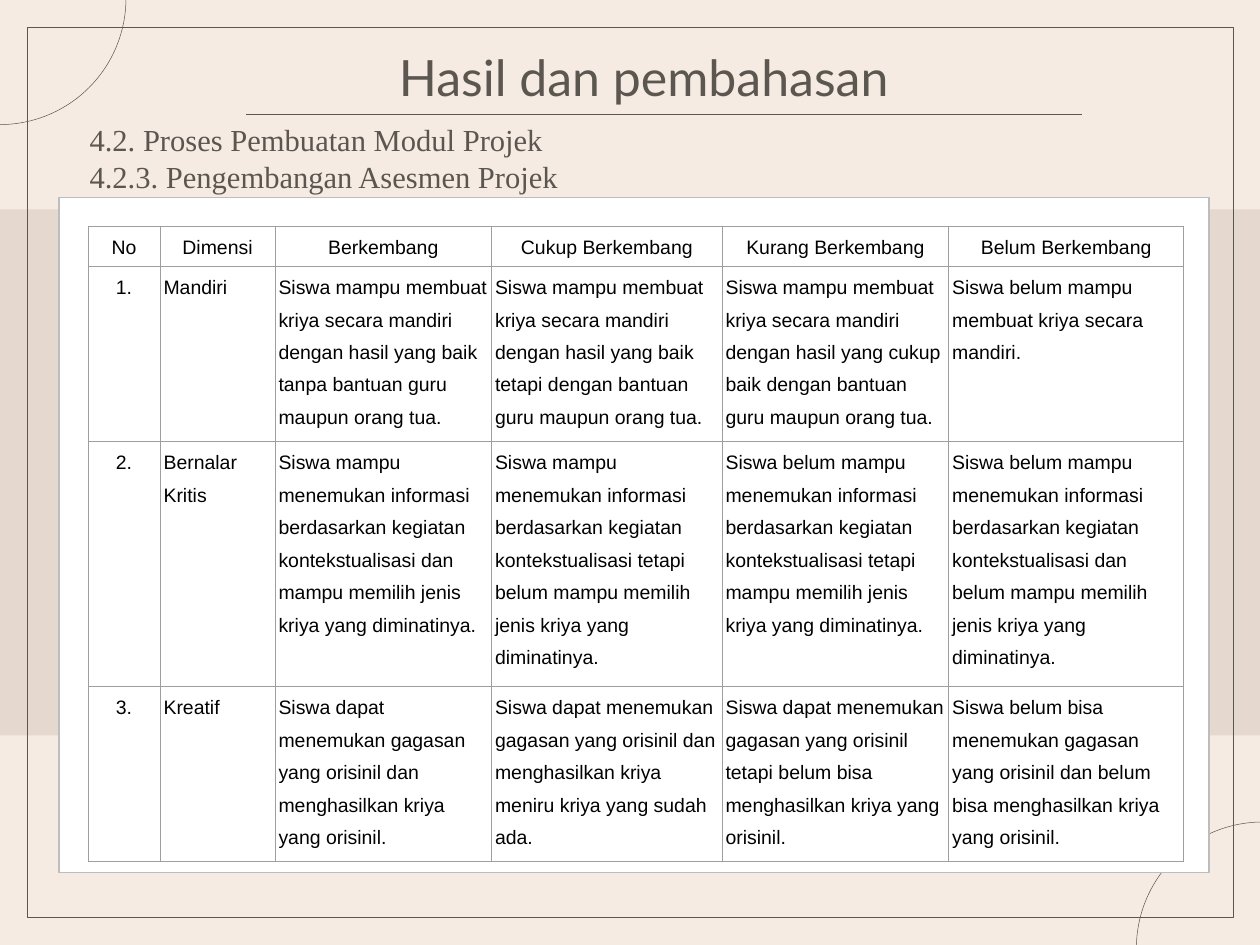
from lxml.etree import SubElement
from pptx import Presentation
from pptx.dml.color import RGBColor
from pptx.enum.shapes import MSO_CONNECTOR, MSO_SHAPE
from pptx.enum.text import MSO_ANCHOR, PP_ALIGN
from pptx.oxml import parse_xml
from pptx.oxml.ns import nsdecls, qn
from pptx.util import Cm, Pt

CREAM = RGBColor(0xF5, 0xEB, 0xE2)
SAND = RGBColor(0xE4, 0xD8, 0xCF)
BROWN = RGBColor(0x5C, 0x56, 0x51)
WHITE = RGBColor(0xFF, 0xFF, 0xFF)
BLACK = RGBColor(0, 0, 0)
SILVER = RGBColor(0xBD, 0xBD, 0xBD)
GRAY = RGBColor(0x9E, 0x9E, 0x9E)

WIDTH, HEIGHT = 64.01, 48.01
COLS = [3.66, 5.84, 11, 11.71, 11.51, 11.94]
ROWS = [2.01, 8.36, 11.53, 8.36]
RUBRIC = [
    ["No", "Dimensi", "Berkembang", "Cukup Berkembang", "Kurang Berkembang",
     "Belum Berkembang"],
    ["1.", "Mandiri",
     "Siswa mampu membuat kriya secara mandiri dengan hasil yang baik tanpa bantuan guru maupun orang tua.",
     "Siswa mampu membuat kriya secara mandiri dengan hasil yang baik tetapi dengan bantuan guru maupun orang tua.",
     "Siswa mampu membuat kriya secara mandiri dengan hasil yang cukup baik dengan bantuan guru maupun orang tua.",
     "Siswa belum mampu membuat kriya secara mandiri."],
    ["2.", "Bernalar Kritis",
     "Siswa mampu menemukan informasi berdasarkan kegiatan kontekstualisasi dan mampu memilih jenis kriya yang diminatinya.",
     "Siswa mampu menemukan informasi berdasarkan kegiatan kontekstualisasi tetapi belum mampu memilih jenis kriya yang diminatinya.",
     "Siswa belum mampu menemukan informasi berdasarkan kegiatan kontekstualisasi tetapi mampu memilih jenis kriya yang diminatinya.",
     "Siswa belum mampu menemukan informasi berdasarkan kegiatan kontekstualisasi dan belum mampu memilih jenis kriya yang diminatinya."],
    ["3.", "Kreatif",
     "Siswa dapat menemukan gagasan yang orisinil dan menghasilkan kriya yang orisinil.",
     "Siswa dapat menemukan gagasan yang orisinil dan menghasilkan kriya meniru kriya yang sudah ada.",
     "Siswa dapat menemukan gagasan yang orisinil tetapi belum bisa menghasilkan kriya yang orisinil.",
     "Siswa belum bisa menemukan gagasan yang orisinil dan belum bisa menghasilkan kriya yang orisinil."],
]


def write(frame, text, size, font, color=BROWN, align=PP_ALIGN.LEFT,
          anchor=MSO_ANCHOR.TOP, spacing=None, after=None):
    """Fill a text frame with one paragraph per line of text."""
    frame.word_wrap = True
    frame.vertical_anchor = anchor
    for i, line in enumerate(text.split("\n")):
        para = frame.add_paragraph() if i else frame.paragraphs[0]
        para.alignment = align
        para.line_spacing = spacing
        para.space_after = after
        run = para.add_run()
        run.text = line
        run.font.size = Pt(size)
        run.font.name = font
        run.font.color.rgb = color


def add_text(slide, x, y, w, h, text, **style):
    frame = slide.shapes.add_textbox(Cm(x), Cm(y), Cm(w), Cm(h)).text_frame
    frame.margin_left = frame.margin_right = Cm(0.71)
    frame.margin_top = frame.margin_bottom = Cm(0.71)
    write(frame, text, **style)


def add_form(slide, kind, x, y, w, h, fill=None, line=None, weight=0.75):
    form = slide.shapes.add_shape(kind, Cm(x), Cm(y), Cm(w), Cm(h))
    form.shadow.inherit = False
    if fill is None:
        form.fill.background()
    else:
        form.fill.solid()
        form.fill.fore_color.rgb = fill
    if line is None:
        form.line.fill.background()
    else:
        form.line.color.rgb = line
        form.line.width = Pt(weight)
    return form


def add_decor(slide, x, y, w, h):
    """Draw the band, the corner arcs and the thin frame."""
    rect = MSO_SHAPE.RECTANGLE
    add_form(slide, rect, x, y + 10.64, w, 26.72, fill=SAND)
    size = 12.83
    for left, top, turn in [(x - 6.43, y - 6.5, 0),
                            (x + w - 6.28, y + h - 6.25, 180)]:
        pie = add_form(slide, MSO_SHAPE.PIE, left, top, size, size, line=BROWN)
        pie.adjustments[0] = 0
        pie.adjustments[1] = 54.28
        pie.rotation = turn
    add_form(slide, rect, x + 1.37, y + 1.4, w - 2.75, h - 2.8, line=BROWN)


def add_head(slide, x, y, w, h):
    """Place the title, its rule and the two section lines."""
    add_text(slide, x + 8.17, y, 41.38, 4.24, "Hasil dan pembahasan",
             size=72, font="Lato", align=PP_ALIGN.CENTER,
             anchor=MSO_ANCHOR.BOTTOM, spacing=0.7)
    level = Cm(y + 4.01)
    rule = slide.shapes.add_connector(
        MSO_CONNECTOR.STRAIGHT, Cm(x + 8.68), level, Cm(x + 51.15), level)
    rule.line.color.rgb = BROWN
    rule.line.width = Pt(0.75)
    SubElement(rule._element.spPr, qn("a:effectLst"))
    add_text(slide, x, y + 3.68, w, h - 3.68,
             "4.2. Proses Pembuatan Modul Projek\n"
             "4.2.3. Pengembangan Asesmen Projek",
             size=44, font="Times New Roman", align=PP_ALIGN.JUSTIFY)


def set_edges(cell):
    props = cell._tc.get_or_add_tcPr()
    for i, side in enumerate("LRTB"):
        props.insert(i, parse_xml(
            f'<a:ln{side} {nsdecls("a")} w="{Pt(0.75)}"><a:solidFill>'
            f'<a:srgbClr val="{GRAY}"/></a:solidFill></a:ln{side}>'))


def add_card(slide, x, y, w, h):
    """Place the white card with the rubric table."""
    add_form(slide, MSO_SHAPE.RECTANGLE, x, y, w, h, WHITE, SILVER, 2)
    table = slide.shapes.add_table(
        len(ROWS), len(COLS), Cm(x + 1.47), Cm(y + 1.48),
        Cm(sum(COLS)), Cm(sum(ROWS))).table
    table.first_row = table.horz_banding = False
    for col, wide in zip(table.columns, COLS):
        col.width = Cm(wide)
    for row, tall in zip(table.rows, ROWS):
        row.height = Cm(tall)
    for r, texts in enumerate(RUBRIC):
        for c, text in enumerate(texts):
            cell = table.cell(r, c)
            cell.margin_left = cell.margin_right = Cm(0.18)
            cell.margin_top = cell.margin_bottom = 0
            cell.fill.background()
            set_edges(cell)
            if r == 0 or c == 0:
                align = PP_ALIGN.CENTER
            else:
                align = PP_ALIGN.JUSTIFY if c == 1 else PP_ALIGN.LEFT
            write(cell.text_frame, text, size=28, font="Arial", color=BLACK,
                  align=align, spacing=1.5, after=Pt(10))


def main():
    deck = Presentation()
    deck.slide_width, deck.slide_height = Cm(WIDTH), Cm(HEIGHT)
    slide = deck.slides.add_slide(deck.slide_layouts[6])
    slide.background.fill.solid()
    slide.background.fill.fore_color.rgb = CREAM
    add_decor(slide, 0, 0, WIDTH, HEIGHT)
    add_head(slide, 3.84, 1.78, 53.98, 8.69)
    add_card(slide, 3, 10.03, 58.42, 34.29)
    deck.save("out.pptx")


if __name__ == "__main__":
    main()
